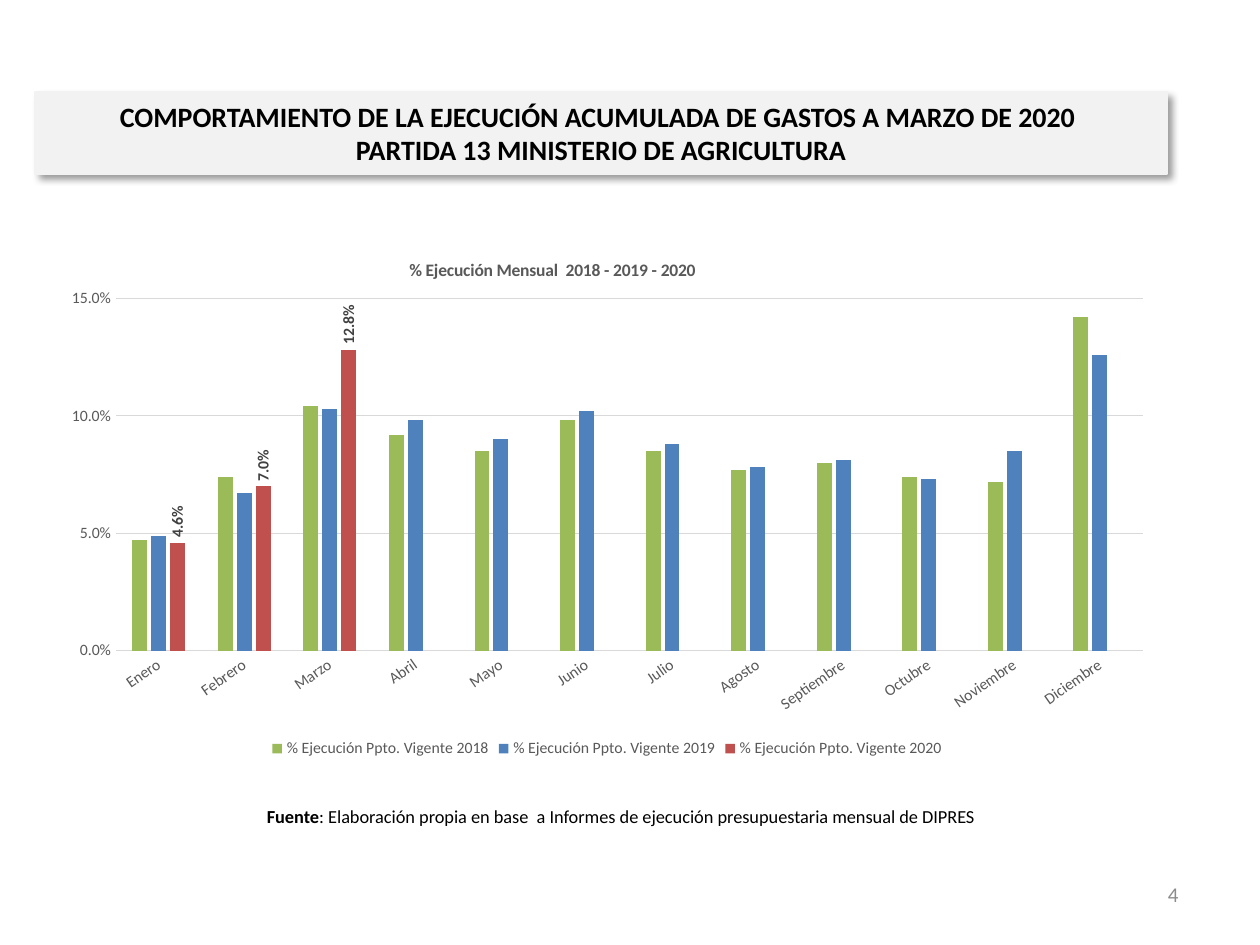
from lxml import etree
from pptx import Presentation
from pptx.chart.data import CategoryChartData
from pptx.dml.color import RGBColor
from pptx.enum.chart import XL_CHART_TYPE, XL_LABEL_POSITION, XL_LEGEND_POSITION, XL_TICK_MARK
from pptx.enum.text import MSO_ANCHOR, MSO_AUTO_SIZE, PP_ALIGN
from pptx.oxml import parse_xml
from pptx.oxml.ns import nsdecls, qn
from pptx.util import Emu, Pt

COLUMN = XL_CHART_TYPE.COLUMN_CLUSTERED
BOTTOM = XL_LEGEND_POSITION.BOTTOM
OUTSIDE = XL_LABEL_POSITION.OUTSIDE_END
NO_TICK = XL_TICK_MARK.NONE
MIDDLE = MSO_ANCHOR.MIDDLE
NO_FIT = MSO_AUTO_SIZE.NONE
CENTER, RIGHT = PP_ALIGN.CENTER, PP_ALIGN.RIGHT

SCALE = 914400 / 126
FONT = "Calibri"
COLORS = {
    "black": "000000", "band": "F2F2F2", "number": "8C8C8C",
    "text": "595959", "label": "404040", "grid": "D9D9D9",
    "2018": "9BBB59", "2019": "4F81BD", "2020": "C0504D",
}
MONTHS = ["Enero", "Febrero", "Marzo", "Abril", "Mayo", "Junio", "Julio",
          "Agosto", "Septiembre", "Octubre", "Noviembre", "Diciembre"]
RATES = {
    "2018": [0.047, 0.074, 0.104, 0.092, 0.085, 0.098,
             0.085, 0.077, 0.08, 0.074, 0.072, 0.142],
    "2019": [0.049, 0.067, 0.103, 0.098, 0.09, 0.102,
             0.088, 0.078, 0.081, 0.073, 0.085, 0.126],
    "2020": [0.046, 0.07, 0.128] + [None] * 9,
}


def px(*vals):
    """Turn pixel lengths into EMU."""
    return [Emu(round(val * SCALE)) for val in vals]


def rgb(name):
    """Look up a colour by name."""
    return RGBColor.from_string(COLORS[name])


def style(font, size, color, bold=False):
    """Set the face, size, colour and weight of a font."""
    font.name, font.size, font.bold = FONT, Pt(size), bold
    font.color.rgb = rgb(color)


def add_run(para, text, size, color, bold=False):
    """Append one styled run to a paragraph."""
    run = para.add_run()
    run.text = text
    style(run.font, size, color, bold)


def set_frame(frame, align):
    """Wrap and centre a text frame and return its first paragraph."""
    frame.word_wrap = True
    frame.auto_size = NO_FIT
    frame.vertical_anchor = MIDDLE
    para = frame.paragraphs[0]
    para.alignment = align
    return para


def add_title(slide):
    """Fill the title placeholder as a grey band with a soft shadow."""
    title = slide.shapes.title
    title.left, title.top, title.width, title.height = px(35, 92, 1132, 82)
    title.fill.solid()
    title.fill.fore_color.rgb = rgb("band")
    title.line.color.rgb = rgb("band")
    title.line.width = Pt(0.75)
    title._element.spPr.append(parse_xml(
        f'<a:effectLst {nsdecls("a")}><a:outerShdw blurRad="50800" dist="38100" '
        f'dir="2700000" algn="tl" rotWithShape="0"><a:srgbClr val="{COLORS["black"]}">'
        '<a:alpha val="40000"/></a:srgbClr></a:outerShdw></a:effectLst>'))
    para = set_frame(title.text_frame, CENTER)
    add_run(para, "COMPORTAMIENTO DE LA EJECUCIÓN ACUMULADA DE GASTOS A MARZO DE 2020 ",
            16, "black", True)
    para.add_line_break()
    add_run(para, "PARTIDA 13 MINISTERIO DE AGRICULTURA", 16, "black", True)


def add_text(slide, box, align, runs):
    """Add a text box made of styled runs."""
    para = set_frame(slide.shapes.add_textbox(*px(*box)).text_frame, align)
    for run in runs:
        add_run(para, *run)


def place(node, index, **spots):
    """Give a chart part a manual layout in fractions of the chart."""
    for old in node.findall(qn("c:layout")):
        node.remove(old)
    layout = parse_xml(f'<c:layout {nsdecls("c")}><c:manualLayout/></c:layout>')
    for key, val in spots.items():
        etree.SubElement(layout[0], qn(f"c:{key}"), val=str(val))
    node.insert(index, layout)


def turn(node, angle):
    """Rotate the text of a chart part by degrees."""
    body = node.find(qn("c:txPr")).find(qn("a:bodyPr"))
    body.set("rot", str(angle * 60000))
    body.set("vert", "horz")


def set_axes(chart):
    """Format both axes and the grid."""
    cat, val = chart.category_axis, chart.value_axis
    for axis in (cat, val):
        axis.major_tick_mark = axis.minor_tick_mark = NO_TICK
        style(axis.tick_labels.font, 9, "text")
    turn(cat._element, -35)
    val.minimum_scale, val.maximum_scale, val.major_unit = 0, 0.15, 0.05
    val.tick_labels.number_format = "0.0%"
    val.tick_labels.number_format_is_linked = False
    val.format.line.fill.background()
    for line in (cat.format.line, val.major_gridlines.format.line):
        line.color.rgb = rgb("grid")
        line.width = Pt(0.75)


def set_bars(plot):
    """Colour the bars and label the last year."""
    plot.gap_width, plot.overlap = 219, -27
    plot.vary_by_categories = False
    for year, bars in zip(RATES, plot.series):
        bars.format.fill.solid()
        bars.format.fill.fore_color.rgb = rgb(year)
        bars.invert_if_negative = False
    labels = bars.data_labels
    labels.show_value = True
    labels.position = OUTSIDE
    labels.number_format = "0.0%"
    labels.number_format_is_linked = False
    style(labels.font, 9, "label", True)
    turn(labels._element, -90)


def add_chart(slide):
    """Add the column chart of monthly rates."""
    data = CategoryChartData(number_format="0.0%")
    data.categories = MONTHS
    for year, vals in RATES.items():
        data.add_series(f"% Ejecución Ppto. Vigente {year}", vals)
    chart = slide.shapes.add_chart(COLUMN, *px(49, 229, 1116, 534), data).chart
    style(chart.font, 10, "black")
    chart.has_title = True
    add_run(chart.chart_title.text_frame.paragraphs[0],
            "% Ejecución Mensual  2018 - 2019 - 2020", 10, "text", True)
    place(chart.chart_title._element, 1, xMode="edge", yMode="edge", x=0.32, y=0.05)
    plot = chart.plots[0]
    place(plot._element.getparent(), 0, layoutTarget="inner", xMode="edge",
          yMode="edge", x=0.06, y=0.13, w=0.92, h=0.66)
    chart.has_legend = True
    chart.legend.position = BOTTOM
    chart.legend.include_in_layout = False
    style(chart.legend.font, 9, "text")
    set_axes(chart)
    set_bars(plot)


def main():
    """Build and save the slide."""
    deck = Presentation()
    deck.slide_width, deck.slide_height = px(1260, 945)
    slide = deck.slides.add_slide(deck.slide_layouts[5])
    add_text(slide, (897, 869, 294, 50), RIGHT, [("4", 12, "number")])
    add_title(slide)
    add_text(slide, (120, 794, 1002, 45), CENTER, [
        ("Fuente", 10.5, "black", True),
        (": Elaboración propia en base  a Informes de ejecución presupuestaria "
         "mensual de DIPRES", 10.5, "black")])
    add_chart(slide)
    deck.save("out.pptx")


if __name__ == "__main__":
    main()
